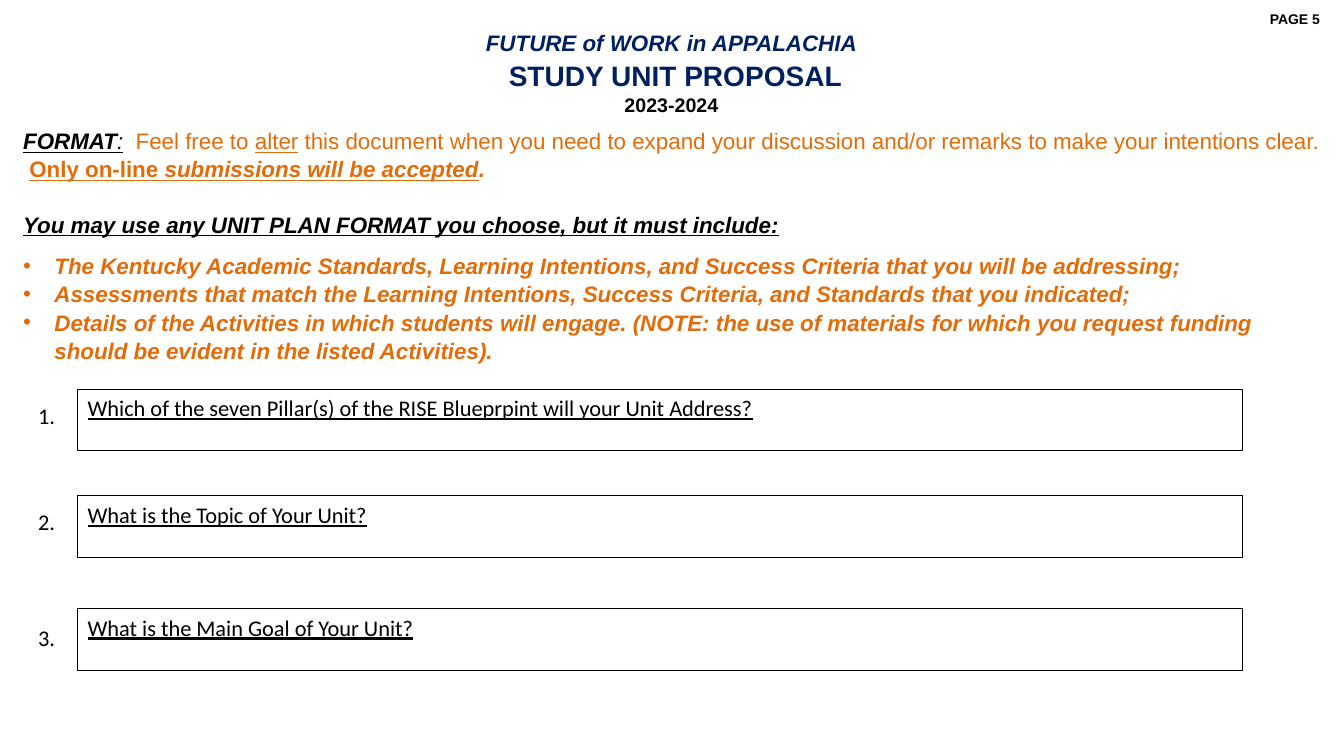
from dataclasses import dataclass

from lxml import etree
from pptx import Presentation
from pptx.dml.color import RGBColor
from pptx.enum.shapes import MSO_SHAPE
from pptx.enum.text import MSO_ANCHOR, MSO_AUTO_SIZE, PP_ALIGN
from pptx.oxml.ns import qn
from pptx.util import Inches, Pt

LEFT, CENTER, RIGHT = PP_ALIGN.LEFT, PP_ALIGN.CENTER, PP_ALIGN.RIGHT
TOP = MSO_ANCHOR.TOP
NO_AUTOFIT = MSO_AUTO_SIZE.NONE
RECTANGLE = MSO_SHAPE.RECTANGLE


@dataclass(frozen=True)
class Theme:
    """Hold the fonts, colours, type sizes and spacing of the slide."""
    heading_font: str = "Arial"
    question_font: str = "Calibri"
    ink: str = "000000"
    navy: str = "002060"
    orange: str = "E36C0A"
    page: int = 10
    year: int = 14
    text: int = 16
    title: int = 20
    leading: float = 1.05
    border: float = 0.75


THEME = Theme()
MARGIN, CONTENT_WIDTH = 0.13, 13.06
BULLET_INDENT = 0.31
QUESTION_LEFT, QUESTION_WIDTH, QUESTION_HEIGHT = 0.77, 11.55, 0.61
NUMBER_LEFT, NUMBER_WIDTH, NUMBER_HEIGHT = 0.28, 0.5, 0.37

PLAIN = {"bold": False, "italic": False, "underline": False}
BOLD = PLAIN | {"bold": True}
BOLD_ITALIC = BOLD | {"italic": True}
UNDERLINED = PLAIN | {"underline": True}
STRONG_LINK = BOLD_ITALIC | {"underline": True}

HEADING = [
    [("FUTURE of WORK in APPALACHIA", THEME.navy, THEME.text, BOLD_ITALIC)],
    [(" STUDY UNIT PROPOSAL", THEME.navy, THEME.title, BOLD)],
    [("2023-2024", THEME.ink, THEME.year, BOLD)],
]
FORMAT_NOTE = [
    ("FORMAT", THEME.ink, THEME.text, STRONG_LINK),
    (":", THEME.ink, THEME.text, UNDERLINED | {"italic": True}),
    ("  Feel free to ", THEME.orange, THEME.text, PLAIN),
    ("alter", THEME.orange, THEME.text, UNDERLINED),
    (" this document when you need to expand your discussion and/or remarks "
     "to make your intentions clear.  ", THEME.orange, THEME.text, PLAIN),
    ("Only on-line", THEME.orange, THEME.text, UNDERLINED | {"bold": True}),
    (" submissions will be accepted", THEME.orange, THEME.text, STRONG_LINK),
    (".", THEME.orange, THEME.text, BOLD_ITALIC),
]
REQUIREMENTS_LEAD = [
    ("You may use any UNIT PLAN FORMAT you choose, but it must include:",
     THEME.ink, THEME.text, STRONG_LINK),
]
REQUIREMENTS = [
    "The Kentucky Academic Standards, Learning Intentions, and Success "
    "Criteria that you will be addressing;",
    "Assessments that match the Learning Intentions, Success Criteria, "
    "and Standards that you indicated;",
    "Details of the Activities in which students will engage. (NOTE: the use "
    "of materials for which you request funding should be evident in the "
    "listed Activities).",
]
QUESTIONS = [
    (3.86, 3.94, "Which of the seven Pillar(s) of the RISE Blueprpint will "
                 "your Unit Address?"),
    (4.92, 4.99, "What is the Topic of Your Unit?"),
    (6.04, 6.14, "What is the Main Goal of Your Unit?"),
]


def place(shape, left, top, width, height):
    """Move and size a shape, in inches."""
    box = {"left": left, "top": top, "width": width, "height": height}
    for side, length in box.items():
        setattr(shape, side, Inches(length))


def prepare_frame(shape):
    """Give a shape a wrapped, top-anchored text frame and return it."""
    frame = shape.text_frame
    settings = {"word_wrap": True, "auto_size": NO_AUTOFIT,
                "vertical_anchor": TOP}
    for name, value in settings.items():
        setattr(frame, name, value)
    return frame


def write_runs(paragraph, runs, font_name, align=LEFT, before=0, leading=1.0):
    """Fill a paragraph with formatted runs."""
    layout = {"alignment": align, "space_before": Pt(before),
              "space_after": Pt(0), "line_spacing": leading}
    for name, value in layout.items():
        setattr(paragraph, name, value)
    for text, color, size, emphasis in runs:
        run = paragraph.add_run()
        run.text = text
        run.font.color.rgb = RGBColor.from_string(color)
        style = emphasis | {"name": font_name, "size": Pt(size)}
        for name, value in style.items():
            setattr(run.font, name, value)


def set_bullet(paragraph, shown):
    """Show a hanging round bullet or remove the inherited one."""
    properties = paragraph._p.get_or_add_pPr()
    indent = Inches(BULLET_INDENT) if shown else 0
    properties.set("marL", str(indent))
    properties.set("indent", str(-indent))
    if shown:
        etree.SubElement(properties, qn("a:buFont")).set("typeface", "Arial")
        etree.SubElement(properties, qn("a:buChar")).set("char", "•")
    else:
        etree.SubElement(properties, qn("a:buNone"))


def add_text(slide, left, top, width, height, runs, font_name, align=LEFT):
    """Add a one-paragraph text box."""
    label = slide.shapes.add_textbox(0, 0, 0, 0)
    place(label, left, top, width, height)
    write_runs(prepare_frame(label).paragraphs[0], runs, font_name, align)


def fill_heading(heading):
    """Write the centred heading lines into the title placeholder."""
    place(heading, MARGIN, 0.23, CONTENT_WIDTH, 0.94)
    frame = prepare_frame(heading)
    for index, line in enumerate(HEADING):
        paragraph = frame.add_paragraph() if index else frame.paragraphs[0]
        write_runs(paragraph, line, THEME.heading_font, CENTER,
                   leading=THEME.leading)


def fill_instructions(instructions):
    """Write the format note and the requirements list into the body."""
    place(instructions, MARGIN, 1.2, CONTENT_WIDTH, 2.5)
    frame = prepare_frame(instructions)
    entries = [(FORMAT_NOTE, 0, False), (REQUIREMENTS_LEAD, 19.3, False)]
    for index, requirement in enumerate(REQUIREMENTS):
        runs = [(requirement, THEME.orange, THEME.text, BOLD_ITALIC)]
        entries.append((runs, 0 if index else 9.7, True))
    for index, (runs, before, bulleted) in enumerate(entries):
        paragraph = frame.add_paragraph() if index else frame.paragraphs[0]
        write_runs(paragraph, runs, THEME.heading_font, before=before,
                   leading=THEME.leading)
        set_bullet(paragraph, bulleted)


def add_question(slide, number, top, number_top, question):
    """Add an outlined answer box with its question and number."""
    answer = slide.shapes.add_shape(RECTANGLE, 0, 0, 0, 0)
    place(answer, QUESTION_LEFT, top, QUESTION_WIDTH, QUESTION_HEIGHT)
    answer.shadow.inherit = False
    answer.fill.background()
    answer.line.color.rgb = RGBColor.from_string(THEME.ink)
    answer.line.width = Pt(THEME.border)
    write_runs(prepare_frame(answer).paragraphs[0],
               [(question, THEME.ink, THEME.text, UNDERLINED)],
               THEME.question_font)
    add_text(slide, NUMBER_LEFT, number_top, NUMBER_WIDTH, NUMBER_HEIGHT,
             [(f"{number}.", THEME.ink, THEME.text, PLAIN)],
             THEME.question_font)


def main():
    """Build the study unit proposal slide and save it."""
    deck = Presentation()
    deck.slide_width, deck.slide_height = Inches(13.33), Inches(7.5)
    slide = deck.slides.add_slide(deck.slide_layouts[1])
    fill_heading(slide.shapes.title)
    fill_instructions(slide.placeholders[1])
    add_text(slide, MARGIN, 0.06, CONTENT_WIDTH, 0.27,
             [("PAGE 5", THEME.ink, THEME.page, BOLD)],
             THEME.heading_font, RIGHT)
    for number, (top, number_top, question) in enumerate(QUESTIONS, 1):
        add_question(slide, number, top, number_top, question)
    deck.save("out.pptx")


if __name__ == "__main__":
    main()
